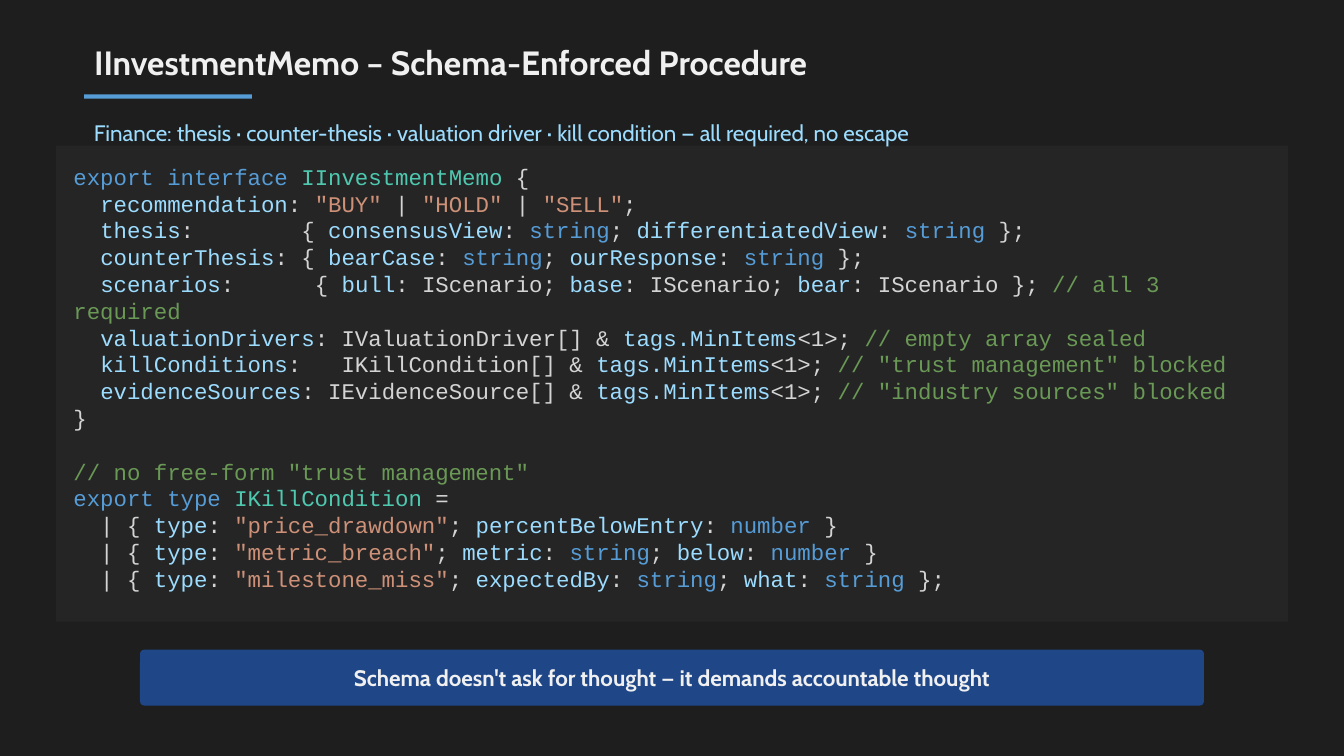
"""Builds the slide on the schema-enforced investment memo."""
import itertools
import pptx
import pptx.util
import pptx.dml.color
import pptx.enum.shapes
import pptx.enum.text

Pt = pptx.util.Pt
Shape = pptx.enum.shapes.MSO_SHAPE
Align = pptx.enum.text.PP_ALIGN
Anchor = pptx.enum.text.MSO_ANCHOR

WHITE, SKY, BLUE, TEAL = "F0F0F0", "9CDCFE", "569CD6", "4EC9B0"
PLAIN, RUST, GREEN = "D4D4D4", "CE9178", "6A9955"
KEYS = {"string", "number"}

MEMO = [
    'export interface IInvestmentMemo {',
    '  recommendation: "BUY" | "HOLD" | "SELL";',
    '  thesis:        { consensusView: string; differentiatedView: string };',
    '  counterThesis: { bearCase: string; ourResponse: string };',
    '  scenarios:      { bull: IScenario; base: IScenario; bear: IScenario }; // all 3 required',
    '  valuationDrivers: IValuationDriver[] & tags.MinItems<1>; // empty array sealed',
    '  killConditions:   IKillCondition[] & tags.MinItems<1>; // "trust management" blocked',
    '  evidenceSources: IEvidenceSource[] & tags.MinItems<1>; // "industry sources" blocked',
    '}',
]
KILL = [
    '// no free-form "trust management"',
    'export type IKillCondition =',
    '  | { type: "price_drawdown"; percentBelowEntry: number }',
    '  | { type: "metric_breach"; metric: string; below: number }',
    '  | { type: "milestone_miss"; expectedBy: string; what: string };',
]


def paint(text):
    return pptx.dml.color.RGBColor.from_string(text)


def style(font, **form):
    color = form.pop("color")
    for key, value in form.items():
        setattr(font, key, value)
    font.color.rgb = paint(color)


deck = pptx.Presentation()
deck.slide_width, deck.slide_height = Pt(960), Pt(540)
slide = deck.slides.add_slide(deck.slide_layouts[5])
slide.background.fill.solid()
slide.background.fill.fore_color.rgb = paint("1E1E1E")

bars = []
for kind, box, fill in (
    (Shape.RECTANGLE, (60, 67.5, 120, 3), BLUE),
    (Shape.RECTANGLE, (40, 104, 880, 340), "252526"),
    (Shape.ROUNDED_RECTANGLE, (100, 464, 760, 40), "1F4788"),
):
    bar = slide.shapes.add_shape(kind, *map(Pt, box))
    bar.shadow.inherit = False
    bar.fill.solid()
    bar.fill.fore_color.rgb = paint(fill)
    bar.line.fill.background()
    bars.append(bar)
banner = bars[-1]
banner.adjustments[0] = 0.08

title = slide.shapes.title
title.left, title.top, title.width, title.height = map(Pt, (60, 24, 828, 40))
lead = slide.shapes.add_textbox(*map(Pt, (60, 76.5, 828, 36)))
for shape, text, side, size, bold, color in (
    (title, "IInvestmentMemo – Schema-Enforced Procedure", Align.LEFT, 24, True, WHITE),
    (lead, "Finance: thesis · counter-thesis · valuation driver · kill condition"
     " — all required, no escape", Align.LEFT, 16, False, SKY),
    (banner, "Schema doesn't ask for thought — it demands accountable thought",
     Align.CENTER, 16, True, WHITE),
):
    frame = shape.text_frame
    frame.text = text
    frame.word_wrap = True
    frame.auto_size = pptx.enum.text.MSO_AUTO_SIZE.NONE
    frame.vertical_anchor = Anchor.MIDDLE
    frame.paragraphs[0].alignment = side
    style(frame.paragraphs[0].runs[0].font, name="Cabin", size=Pt(size), bold=bold, color=color)

frame = slide.shapes.add_textbox(*map(Pt, (48, 112, 864, 324))).text_frame
frame.word_wrap = True
for side in ("left", "top", "right", "bottom"):
    setattr(frame, "margin_" + side, Pt(4.5))

pitch = Pt(19.15)
for row, line in enumerate(MEMO + KILL):
    para = frame.add_paragraph() if row else frame.paragraphs[0]
    para.line_spacing = pitch
    if row == len(MEMO):
        para.space_before = pitch
    head = line.startswith("export")
    body, mark, note = line.partition("//")
    parts = []
    for spot, piece in enumerate(body.split('"')):
        if spot % 2:
            parts.append((f'"{piece}"', RUST))
            continue
        for word, chars in itertools.groupby(piece, lambda c: c.isalnum() or c == "."):
            token = "".join(chars)
            color = PLAIN
            if word and token[0].islower():
                color = BLUE if head or token in KEYS else SKY
            elif word and head:
                color = TEAL
            parts.append((token, color))
    if mark:
        parts.append((mark + note, GREEN))
    for color, group in itertools.groupby(parts, lambda part: part[1]):
        run = para.add_run()
        run.text = "".join(text for text, _ in group)
        style(run.font, name="Courier New", size=Pt(16), color=color)

deck.save("out.pptx")
